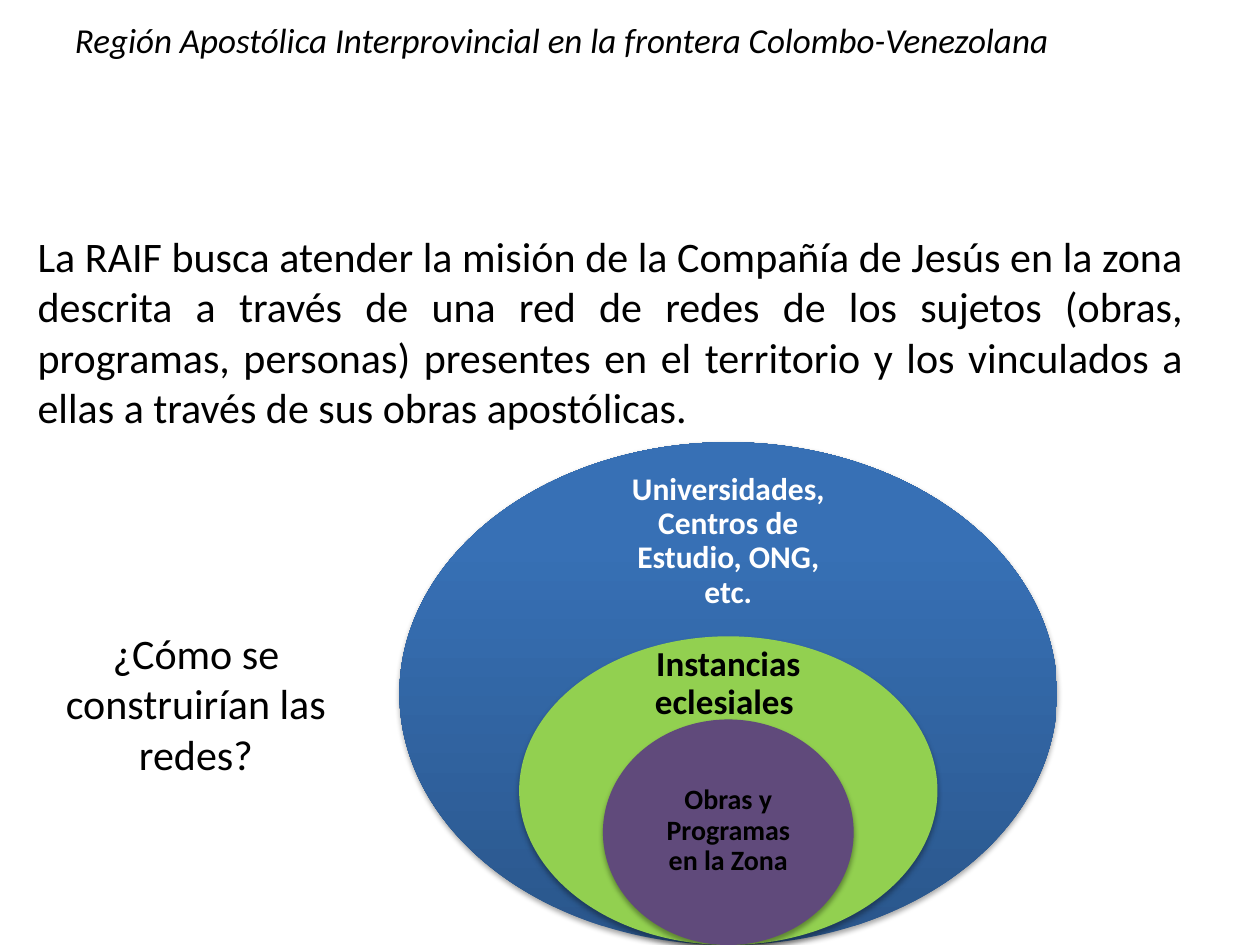
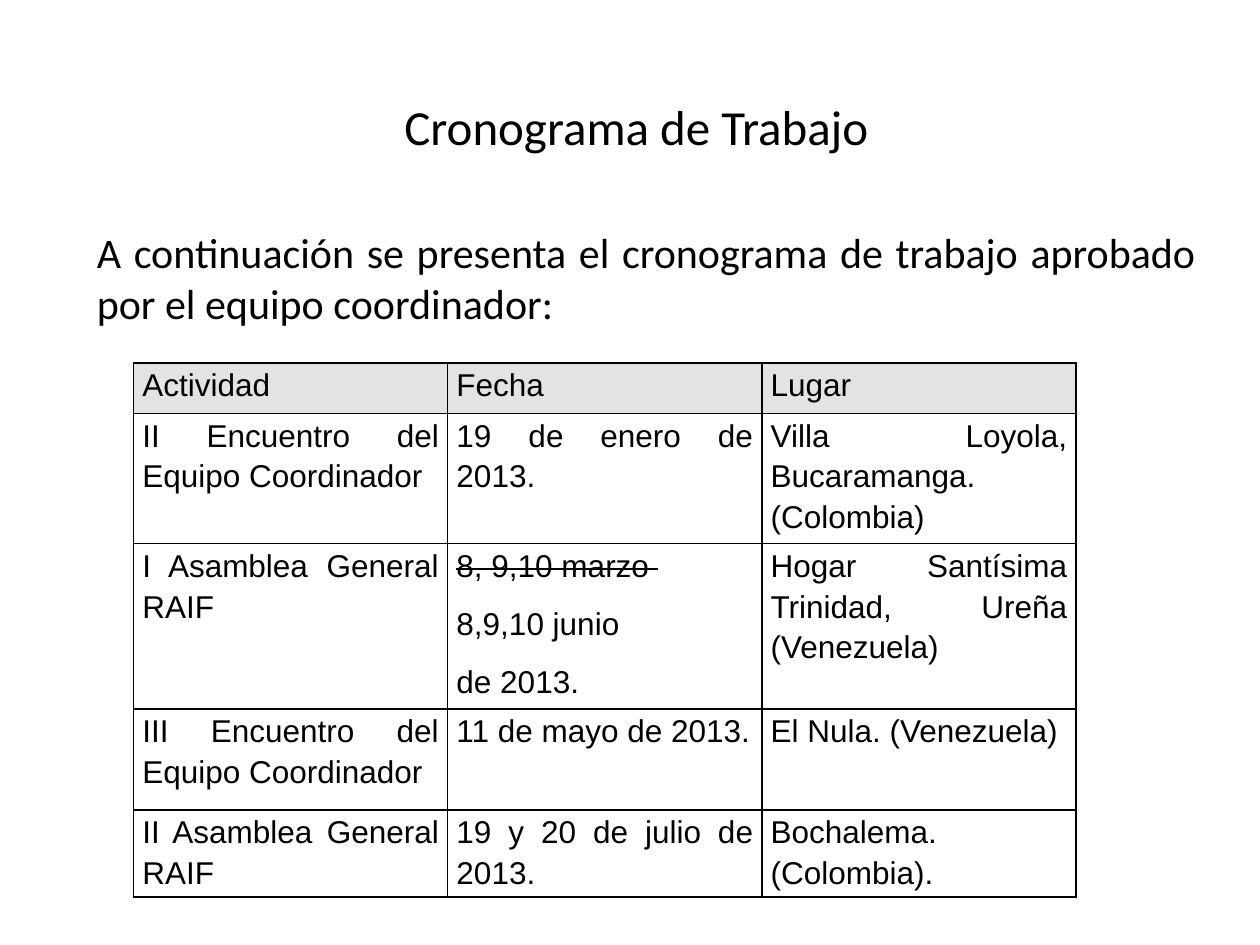
from copy import deepcopy
from dataclasses import dataclass

from lxml import etree
from pptx import Presentation
from pptx import util as u
from pptx.dml.color import RGBColor
from pptx.enum import shapes, text
from pptx.oxml.ns import qn

COLUMNS, ROWS = 100, 75
SLIDE_WIDTH, SLIDE_HEIGHT = u.Inches(10), u.Inches(7.5)
ALIGN, ANCHOR = text.PP_ALIGN, text.MSO_ANCHOR


@dataclass(frozen=True)
class Theme:
    """Colours, fonts, type sizes and line widths of the presentation."""

    ink: str = "000000"
    light: str = "FFFFFF"
    header: str = "E3E3E3"
    green: str = "92D050"
    purple: str = "604A7B"
    blues: tuple[tuple[float, str], ...] = ((0, "2A568B"), (0.8, "3770B5"), (1, "3570B8"))
    font: str = "Calibri"
    table_font: str = "Arial"
    heading: int = 28
    body: int = 24
    subtitle: int = 20
    table: int = 18
    small: int = 16
    border: float = 1


THEME = Theme()


@dataclass(frozen=True)
class Box:
    """A rectangle in grid columns and rows."""

    left: float
    top: float
    width: float
    height: float

    def place(self) -> tuple[int, int, int, int]:
        """Return the rectangle in slide lengths."""
        return (
            round(self.left * SLIDE_WIDTH / COLUMNS),
            round(self.top * SLIDE_HEIGHT / ROWS),
            round(self.width * SLIDE_WIDTH / COLUMNS),
            round(self.height * SLIDE_HEIGHT / ROWS),
        )


@dataclass(frozen=True)
class TextBlock:
    """A paragraph of text and its style."""

    words: str
    box: Box
    size: int = THEME.body
    color: str = THEME.ink
    align: ALIGN = ALIGN.CENTER
    anchor: ANCHOR = ANCHOR.TOP
    bold: bool = False
    italic: bool = False
    spacing: float = 1
    inset: float | None = None


@dataclass(frozen=True)
class Ring:
    """An ellipse resting on the slide's bottom edge, with its label."""

    words: str
    width: float
    height: float
    fill: str | tuple[tuple[float, str], ...]
    label_top: float
    label_width: float
    label_height: float
    size: int
    color: str
    inset: float


@dataclass(frozen=True)
class Struck:
    """A table line that has been crossed out."""

    words: str


RING_CENTER = 57.8
RINGS = (
    Ring("Universidades, Centros de Estudio, ONG, etc.", 52.2, 39.9, THEME.blues,
         37.5, 18.2, 11, THEME.table, THEME.light, 0.11),
    Ring("Instancias eclesiales ", 33.2, 24.5, THEME.green,
         52, 15.5, 4.6, THEME.subtitle, THEME.ink, 0.16),
    Ring("Obras y Programas en la Zona", 19.9, 17.9, THEME.purple,
         61.5, 14.1, 8.9, THEME.small, THEME.ink, 0.12),
)

NETWORK_TEXTS = (
    TextBlock("Región Apostólica Interprovincial en la frontera Colombo-Venezolana",
              Box(0, 0, 89.2, 6.2), THEME.subtitle, anchor=ANCHOR.MIDDLE, italic=True),
    TextBlock("¿Cómo se construirían las redes?", Box(0, 49.3, 31.1, 9.1)),
    TextBlock("La RAIF busca atender la misión de la Compañía de Jesús en la zona descrita "
              "a través de una red de redes de los sujetos (obras, programas, personas) "
              "presentes en el territorio y los vinculados a ellas a través de sus obras "
              "apostólicas. ", Box(2, 17.8, 92.9, 17.2), align=ALIGN.JUSTIFY),
)

SCHEDULE_TEXTS = (
    TextBlock("Cronograma de Trabajo", Box(5.9, 4.6, 89.2, 10.8), THEME.heading,
              anchor=ANCHOR.MIDDLE),
    TextBlock("A continuación se presenta el cronograma de trabajo aprobado por el equipo "
              "coordinador:", Box(6.7, 17.5, 89.2, 12.9), align=ALIGN.JUSTIFY),
)

SCHEDULE_BOX = Box(10.6, 28.8, 74.8, 32)
SCHEDULE_ROW_SHARES = (1, 2, 2, 2, 1)
SCHEDULE = (
    (("Actividad",), ("Fecha",), ("Lugar",)),
    (("II Encuentro del Equipo Coordinador",), ("19 de enero de 2013.",),
     ("Villa Loyola, Bucaramanga. (Colombia)",)),
    (("I Asamblea General RAIF",), (Struck("8, 9,10 marzo "), "8,9,10 junio", "de 2013."),
     ("Hogar Santísima Trinidad, Ureña (Venezuela)",)),
    (("III Encuentro del Equipo Coordinador",), ("11 de mayo de 2013.",),
     ("El Nula. (Venezuela)",)),
    (("II Asamblea General RAIF",), ("19 y 20 de julio de 2013.",),
     ("Bochalema. (Colombia).",)),
)


def add_color(parent, color: str):
    """Append an RGB colour element to its parent."""
    return etree.SubElement(parent, qn("a:srgbClr"), val=color)


def style_font(paragraph, name: str, size: int, color: str) -> None:
    """Set the font that all runs of a paragraph share."""
    paragraph.font.name = name
    paragraph.font.size = u.Pt(size)
    paragraph.font.color.rgb = RGBColor.from_string(color)


def add_text(slide, block: TextBlock) -> None:
    """Draw a text block."""
    frame = slide.shapes.add_textbox(*block.box.place()).text_frame
    frame.word_wrap = True
    frame.vertical_anchor = block.anchor
    if block.inset is not None:
        frame.margin_left = frame.margin_right = u.Inches(block.inset)
        frame.margin_top = frame.margin_bottom = u.Inches(block.inset)
    paragraph = frame.paragraphs[0]
    paragraph.text = block.words
    paragraph.alignment = block.align
    paragraph.line_spacing = block.spacing
    style_font(paragraph, THEME.font, block.size, block.color)
    paragraph.font.bold = block.bold
    paragraph.font.italic = block.italic


def fill_gradient(shape, colors: tuple[tuple[float, str], ...]) -> None:
    """Fill a shape with a gradient that runs from bottom to top."""
    shape.fill.gradient()
    shape.fill.gradient_angle = 90
    stop_list = next(shape.element.iter(qn("a:gsLst")))
    while len(stop_list) < len(colors):
        stop_list.append(deepcopy(stop_list[0]))
    for stop, (position, color) in zip(shape.fill.gradient_stops, colors):
        stop.position = position
        stop.color.rgb = RGBColor.from_string(color)


def add_shadow(shape) -> None:
    """Give a shape a soft shadow below it."""
    shape.shadow.inherit = False
    effects = next(shape.element.iter(qn("a:effectLst")))
    shadow = etree.SubElement(effects, qn("a:outerShdw"), blurRad=str(u.Pt(3.1)),
                              dist=str(u.Pt(1.8)), dir="5400000", rotWithShape="0")
    etree.SubElement(add_color(shadow, THEME.ink), qn("a:alpha"), val="35000")


def add_ring(slide, ring: Ring) -> None:
    """Draw an ellipse and its label on the common axis."""
    box = Box(RING_CENTER - ring.width / 2, ROWS - ring.height, ring.width, ring.height)
    shape = slide.shapes.add_shape(shapes.MSO_SHAPE.OVAL, *box.place())
    if isinstance(ring.fill, str):
        shape.fill.solid()
        shape.fill.fore_color.rgb = RGBColor.from_string(ring.fill)
    else:
        fill_gradient(shape, ring.fill)
    shape.line.fill.background()
    add_shadow(shape)
    label = Box(RING_CENTER - ring.label_width / 2, ring.label_top,
                ring.label_width, ring.label_height)
    add_text(slide, TextBlock(ring.words, label, ring.size, ring.color, anchor=ANCHOR.MIDDLE,
                              bold=True, spacing=0.9, inset=ring.inset))


def add_borders(cell) -> None:
    """Draw the four borders of a table cell."""
    properties = cell._tc.get_or_add_tcPr()
    for index, side in enumerate(("lnL", "lnR", "lnT", "lnB")):
        line = etree.Element(qn(f"a:{side}"), w=str(u.Pt(THEME.border)))
        add_color(etree.SubElement(line, qn("a:solidFill")), THEME.ink)
        properties.insert(index, line)


def fill_cell(cell, lines: tuple[str | Struck, ...], is_header: bool) -> None:
    """Write and style a table cell."""
    cell.margin_left = cell.margin_right = u.Inches(0.07)
    cell.margin_top = cell.margin_bottom = 0
    frame = cell.text_frame
    for index, line in enumerate(lines):
        paragraph = frame.add_paragraph() if index else frame.paragraphs[0]
        run = paragraph.add_run()
        if isinstance(line, Struck):
            run.text = line.words
            run._r.get_or_add_rPr().set("strike", "sngStrike")
        else:
            run.text = line
        paragraph.alignment = ALIGN.JUSTIFY
        paragraph.line_spacing = 1.15
        paragraph.space_after = u.Pt(10)
        style_font(paragraph, THEME.table_font, THEME.table, THEME.ink)
    if is_header:
        cell.fill.solid()
        cell.fill.fore_color.rgb = RGBColor.from_string(THEME.header)
    else:
        cell.fill.background()
    add_borders(cell)


def add_schedule(slide) -> None:
    """Draw the schedule table."""
    place = SCHEDULE_BOX.place()
    table = slide.shapes.add_table(len(SCHEDULE), len(SCHEDULE[0]), *place).table
    table.first_row = table.horz_banding = False
    for row, share in zip(table.rows, SCHEDULE_ROW_SHARES):
        row.height = place[3] * share // sum(SCHEDULE_ROW_SHARES)
    for row_index, entries in enumerate(SCHEDULE):
        for column_index, lines in enumerate(entries):
            fill_cell(table.cell(row_index, column_index), lines, row_index == 0)


def add_slide(presentation, blocks: tuple[TextBlock, ...]):
    """Add a blank slide with its text blocks."""
    slide = presentation.slides.add_slide(presentation.slide_layouts[6])
    for block in blocks:
        add_text(slide, block)
    return slide


def main() -> None:
    """Build the presentation and save it."""
    presentation = Presentation()
    presentation.slide_width, presentation.slide_height = SLIDE_WIDTH, SLIDE_HEIGHT
    network = add_slide(presentation, NETWORK_TEXTS)
    for ring in RINGS:
        add_ring(network, ring)
    add_schedule(add_slide(presentation, SCHEDULE_TEXTS))
    presentation.save("out.pptx")


if __name__ == "__main__":
    main()
